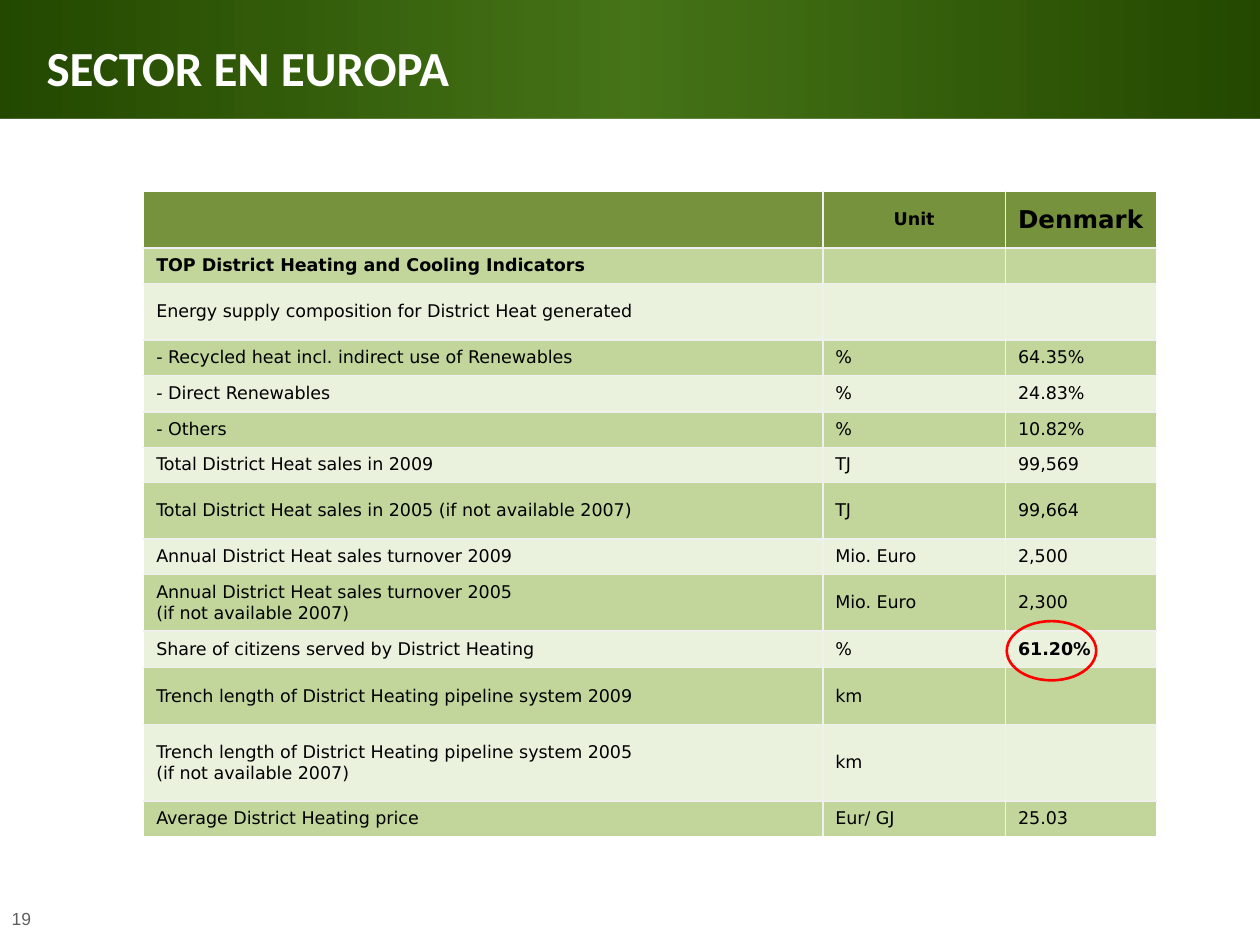
from pptx import Presentation
from pptx.dml.color import RGBColor
from pptx.enum.shapes import MSO_SHAPE
from pptx.enum.text import MSO_ANCHOR, PP_ALIGN
from pptx.oxml import parse_xml
from pptx.oxml.ns import nsdecls, qn
from pptx.util import Inches, Pt
from lxml import etree

RECTANGLE, ELLIPSE = MSO_SHAPE.RECTANGLE, MSO_SHAPE.OVAL
MIDDLE = MSO_ANCHOR.MIDDLE
LEFT, CENTER = PP_ALIGN.LEFT, PP_ALIGN.CENTER

HEADER, DARK_ROW, LIGHT_ROW = "76923C", "C2D69B", "EAF1DD"
OUTER_BORDER, INNER_BORDER = "FFFFFF", "F0F0F0"
TABLE_FONT = "DejaVu Sans"
COLUMN_WIDTHS = [5.39, 1.45, 1.2]
HEADINGS = ("", "Unit", "Denmark")
INDICATORS = [
    (0.28, "TOP District Heating and Cooling Indicators", "", ""),
    (0.45, "Energy supply composition for District Heat generated", "", ""),
    (0.28, "- Recycled heat incl. indirect use of Renewables", "%", "64.35%"),
    (0.29, "- Direct Renewables", "%", "24.83%"),
    (0.28, "- Others", "%", "10.82%"),
    (0.28, "Total District Heat sales in 2009", "TJ", "99,569"),
    (0.45, "Total District Heat sales in 2005 (if not available 2007)", "TJ", "99,664"),
    (0.28, "Annual District Heat sales turnover 2009", "Mio. Euro", "2,500"),
    (0.45, "Annual District Heat sales turnover 2005 \v(if not available 2007)", "Mio. Euro", "2,300"),
    (0.29, "Share of citizens served by District Heating", "%", "61.20%"),
    (0.45, "Trench length of District Heating pipeline system 2009", "km", ""),
    (0.61, "Trench length of District Heating pipeline system 2005 \v(if not available 2007)", "km", ""),
    (0.28, "Average District Heating price", "Eur/ GJ", "25.03"),
]
BOLD_TEXTS = {"Unit", "Denmark", "TOP District Heating and Cooling Indicators", "61.20%"}


def rgb(value):
    return RGBColor.from_string(value)


def write(paragraph, text, font, size, color, bold=False, align=LEFT):
    paragraph.text = text
    paragraph.alignment = align
    for run in paragraph.runs:
        run.font.name = font
        run.font.size = Pt(size)
        run.font.bold = bold
        run.font.color.rgb = rgb(color)
    for line_break in paragraph._p.findall(qn("a:br")):
        etree.SubElement(line_break, qn("a:rPr"), sz=str(size * 100))
    if not text:
        etree.SubElement(paragraph._p, qn("a:endParaRPr"), sz=str(size * 100))


def add_banner(slide):
    banner = slide.shapes.add_shape(RECTANGLE, 0, 0, Inches(10), Inches(0.94))
    banner.shadow.inherit = False
    banner.line.fill.background()
    stops = "".join(
        f'<a:gs pos="{position}"><a:srgbClr val="336600">{change}</a:srgbClr></a:gs>'
        for position, change in [
            (0, '<a:shade val="46275"/>'),
            (50000, '<a:alpha val="90000"/>'),
            (100000, '<a:shade val="46275"/>'),
        ]
    )
    gradient = parse_xml(
        f'<a:gradFill {nsdecls("a")} rotWithShape="1"><a:gsLst>{stops}</a:gsLst>'
        '<a:lin ang="0" scaled="1"/></a:gradFill>'
    )
    banner._element.spPr.find(qn("a:prstGeom")).addnext(gradient)


def add_label(slide, left, top, width, height):
    label = slide.shapes.add_textbox(Inches(left), Inches(top), Inches(width), Inches(height))
    label.text_frame.word_wrap = True
    return label.text_frame


def add_title(slide, text):
    frame = add_label(slide, 0.15, 0.03, 9, 1)
    frame.vertical_anchor = MIDDLE
    frame.margin_left = Inches(0.22)
    title = frame.paragraphs[0]
    write(title, text, "Calibri", 28, "FFFFFF", bold=True)
    properties = title._p.get_or_add_pPr()
    properties.set("marL", str(Inches(0.5)))
    properties.set("indent", str(Inches(-0.5)))


def set_borders(cell, colors):
    for side, color in zip("LRTB", colors):
        cell._tc.get_or_add_tcPr().append(parse_xml(
            f'<a:ln{side} {nsdecls("a")} w="{Pt(1)}"><a:solidFill>'
            f'<a:srgbClr val="{color}"/></a:solidFill></a:ln{side}>'
        ))


def add_indicator_table(slide):
    rows = [(0.45, *HEADINGS), *INDICATORS]
    last_row, last_column = len(rows) - 1, len(COLUMN_WIDTHS) - 1
    table = slide.shapes.add_table(
        len(rows), len(COLUMN_WIDTHS), Inches(1.14), Inches(1.52),
        Inches(sum(COLUMN_WIDTHS)), Inches(sum(row[0] for row in rows)),
    ).table
    for column, width in zip(table.columns, COLUMN_WIDTHS):
        column.width = Inches(width)
    for row_index, (height, *texts) in enumerate(rows):
        table.rows[row_index].height = Inches(height)
        band = DARK_ROW if row_index % 2 else LIGHT_ROW
        for column_index, text in enumerate(texts):
            cell = table.cell(row_index, column_index)
            edges = (column_index == 0, column_index == last_column,
                     row_index == 0, row_index == last_row)
            set_borders(cell, [OUTER_BORDER if edge else INNER_BORDER for edge in edges])
            cell.fill.solid()
            cell.fill.fore_color.rgb = rgb(band if row_index else HEADER)
            cell.vertical_anchor = MIDDLE
            write(cell.text_frame.paragraphs[0], text, TABLE_FONT,
                  14 if text == "Denmark" else 10, "000000",
                  text in BOLD_TEXTS, CENTER if text == "Unit" else LEFT)


def add_highlight(slide):
    ring = slide.shapes.add_shape(ELLIPSE, Inches(7.99), Inches(4.93), Inches(0.71), Inches(0.47))
    ring.shadow.inherit = False
    ring.fill.background()
    ring.line.color.rgb = rgb("FF0000")
    ring.line.width = Pt(1.5)


def main():
    presentation = Presentation()
    presentation.slide_width, presentation.slide_height = Inches(10), Inches(7.5)
    slide = presentation.slides.add_slide(presentation.slide_layouts[6])
    add_banner(slide)
    page_number = add_label(slide, -0.06, 7.16, 0.46, 0.32)
    write(page_number.paragraphs[0], "19", "Arial", 10, "5F5F5F", align=CENTER)
    add_title(slide, "SECTOR EN EUROPA")
    add_indicator_table(slide)
    add_highlight(slide)
    presentation.save("out.pptx")


if __name__ == "__main__":
    main()
